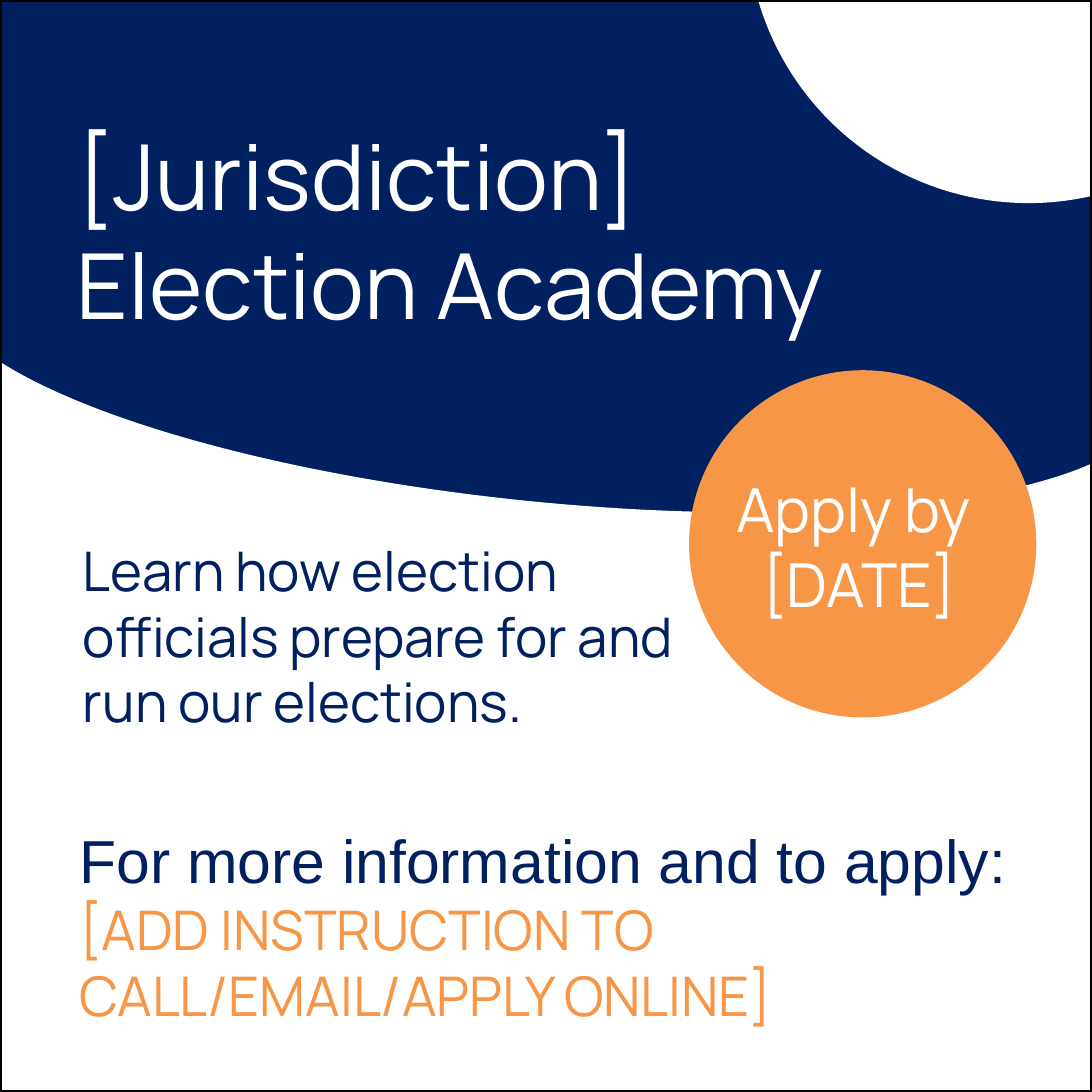
from dataclasses import dataclass
from typing import Optional

from lxml.etree import SubElement
from pptx import Presentation
from pptx.dml.color import RGBColor
from pptx.enum.shapes import MSO_SHAPE
from pptx.enum.text import MSO_ANCHOR, MSO_AUTO_SIZE, PP_ALIGN
from pptx.oxml.ns import qn
from pptx.util import Inches, Pt

NAVY = RGBColor(0x00, 0x20, 0x60)
ORANGE = RGBColor(0xF7, 0x96, 0x46)
WHITE = RGBColor(0xFF, 0xFF, 0xFF)
BLACK = RGBColor(0x00, 0x00, 0x00)


@dataclass
class Figure:
    kind: MSO_SHAPE
    box: tuple[float, float, float, float]
    fill: Optional[RGBColor] = None
    line: Optional[RGBColor] = None
    rotation: float = 0
    adjustments: tuple[float, ...] = ()


BACKDROP = [
    Figure(MSO_SHAPE.RECTANGLE, (0, 0, 10, 6.46), NAVY),
    Figure(MSO_SHAPE.OVAL, (6.84, -3.3, 5.16, 5.16), WHITE),
    Figure(MSO_SHAPE.BLOCK_ARC, (-3.07, -0.8, 16.14, 7.89), WHITE,
           rotation=185.7, adjustments=(110.735, 213.955, 0.316)),
    Figure(MSO_SHAPE.RECTANGLE, (-0.02, 5.12, 2.5, 2.41), WHITE),
    Figure(MSO_SHAPE.OVAL, (6.31, 3.39, 3.18, 3.18), ORANGE),
]
BORDER = Figure(MSO_SHAPE.RECTANGLE, (0, 0, 10, 10), line=BLACK)


def draw_figure(s, figure: Figure) -> None:
    sp = s.shapes.add_shape(figure.kind, *map(Inches, figure.box))
    sp.shadow.inherit = False
    sp.rotation = figure.rotation
    for i, value in enumerate(figure.adjustments):
        sp.adjustments[i] = value
    if figure.fill is None:
        sp.fill.background()
    else:
        sp.fill.solid()
        sp.fill.fore_color.rgb = figure.fill
    if figure.line is None:
        sp.line.fill.background()
    else:
        sp.line.color.rgb = figure.line
        sp.line.width = Pt(3)


def place(sp, left: float, top: float, width: float, height: float):
    sp.left, sp.top = Inches(left), Inches(top)
    sp.width, sp.height = Inches(width), Inches(height)
    sp.element.getparent().append(sp.element)
    tf = sp.text_frame
    tf.word_wrap = True
    tf.auto_size = MSO_AUTO_SIZE.SHAPE_TO_FIT_TEXT
    tf.vertical_anchor = MSO_ANCHOR.TOP
    return tf


def write(p, text: str, *, size: float, color: RGBColor, font: str = "Manrope",
          align: PP_ALIGN = PP_ALIGN.LEFT, spacing: Optional[float] = None) -> None:
    p.alignment = align
    p.space_before = Pt(0)
    if spacing:
        p.line_spacing = Pt(spacing)
    pPr = p._p.get_or_add_pPr()
    pPr.set("marL", "0")
    pPr.set("indent", "0")
    SubElement(pPr, qn("a:buNone"))
    for i, line in enumerate(text.split("\n")):
        if i:
            p.add_line_break()
        r = p.add_run()
        r.text = line
        r.font.name = font
        r.font.size = Pt(size)
        r.font.color.rgb = color


def add_text_box(s, *box: float):
    return place(s.shapes.add_textbox(0, 0, 0, 0), *box)


def main() -> None:
    prs = Presentation()
    prs.slide_width = prs.slide_height = Inches(10)
    s = prs.slides.add_slide(prs.slide_layouts[1])

    for figure in BACKDROP:
        draw_figure(s, figure)

    title = place(s.shapes.title, 0.6, 1.04, 9.03, 2.12)
    write(title.paragraphs[0], "[Jurisdiction] \nElection Academy", size=60, color=WHITE)

    summary = place(s.placeholders[1], 0.66, 4.87, 5.89, 1.92)
    write(summary.paragraphs[0],
          "Learn how election officials prepare for and run our elections.",
          size=36, color=NAVY)

    deadline = add_text_box(s, 6.16, 4.24, 3.42, 1.5)
    write(deadline.paragraphs[0], "Apply by \n[DATE]", size=40, color=WHITE,
          align=PP_ALIGN.CENTER, spacing=50)

    contact = add_text_box(s, 0.63, 7.49, 9.28, 1.99)
    write(contact.paragraphs[0], "For more information and to apply:",
          size=40, color=NAVY, font="Arial")
    write(contact.add_paragraph(), "[ADD INSTRUCTION TO CALL/EMAIL/APPLY ONLINE]",
          size=36, color=ORANGE)

    draw_figure(s, BORDER)
    prs.save("out.pptx")


if __name__ == "__main__":
    main()
